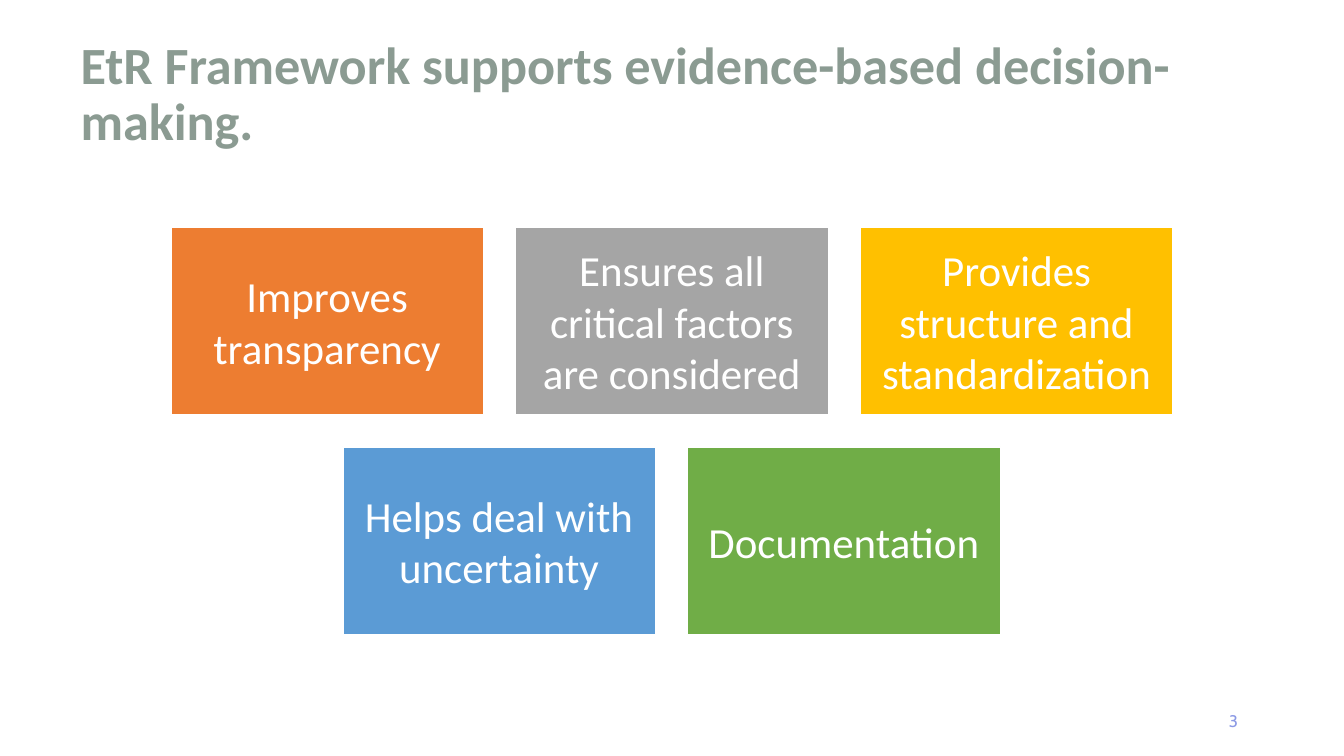
from pptx import Presentation
from pptx.dml.color import RGBColor
from pptx.enum.shapes import MSO_SHAPE
from pptx.enum.text import MSO_ANCHOR, MSO_AUTO_SIZE, PP_ALIGN
from pptx.util import Pt

RECT = MSO_SHAPE.RECTANGLE
LEFT, CENTER, RIGHT = PP_ALIGN.LEFT, PP_ALIGN.CENTER, PP_ALIGN.RIGHT
MIDDLE, BOTTOM = MSO_ANCHOR.MIDDLE, MSO_ANCHOR.BOTTOM
NO_AUTOFIT = MSO_AUTO_SIZE.NONE
TITLE_ONLY = 5

CARD_W, CARD_H, GAP = 466, 280, 47
CARD_ROWS = [
    [("Improves transparency", "ED7D31"),
     ("Ensures all critical factors are considered", "A5A5A5"),
     ("Provides structure and standardization", "FFC000")],
    [("Helps deal with uncertainty", "5B9BD5"),
     ("Documentation", "70AD47")],
]


def px(n):
    """Convert px, at 200 to the inch, to EMU."""
    return n * 4572


def rgb(value):
    return RGBColor.from_string(value)


def set_text(sp, text, size, color, font="Calibri", align=LEFT, anchor=MIDDLE, bold=False):
    tf = sp.text_frame
    tf.text = text
    tf.word_wrap = True
    tf.auto_size = NO_AUTOFIT
    tf.vertical_anchor = anchor
    p = tf.paragraphs[0]
    p.alignment = align
    f = p.runs[0].font
    f.name, f.size, f.bold = font, Pt(size), bold
    f.color.rgb = rgb(color)
    return p


def add_title(s, x, y, w, h):
    sp = s.shapes.title
    sp.left, sp.top, sp.width, sp.height = px(x), px(y), px(w), px(h)
    p = set_text(sp, "EtR Framework supports evidence-based decision-making.",
                 28, "8B9B92", anchor=BOTTOM, bold=True)
    p.line_spacing = Pt(30)


def add_card(s, x, y, text, color):
    sp = s.shapes.add_shape(RECT, px(x), px(y), px(CARD_W), px(CARD_H))
    sp.shadow.inherit = False
    sp.fill.solid()
    sp.fill.fore_color.rgb = rgb(color)
    sp.line.color.rgb = rgb("FFFFFF")
    sp.line.width = Pt(1)
    set_text(sp, text, 23, "FFFFFF", align=CENTER)
    tf = sp.text_frame
    tf.margin_left = tf.margin_right = tf.margin_top = tf.margin_bottom = px(19)


def add_card_grid(s, x, y, w):
    """Stack the rows of cards, each centred in the width w."""
    for i, row in enumerate(CARD_ROWS):
        row_w = len(row) * (CARD_W + GAP) - GAP
        row_x = x + (w - row_w) // 2
        for j, (text, color) in enumerate(row):
            add_card(s, row_x + j * (CARD_W + GAP), y + i * (CARD_H + GAP), text, color)


def add_page_number(s, x, y, w, h):
    sp = s.shapes.add_textbox(px(x), px(y), px(w), px(h))
    set_text(sp, "3", 9, "8C9AE5", font="Cabin", align=RIGHT)


def main():
    prs = Presentation()
    prs.slide_width, prs.slide_height = px(2000), px(1125)
    s = prs.slides.add_slide(prs.slide_layouts[TITLE_ONLY])
    add_title(s, 100, 46, 1800, 188)
    add_card_grid(s, 100, 338, 1800)
    add_page_number(s, 1412, 1043, 450, 60)
    prs.save("out.pptx")


if __name__ == "__main__":
    main()
